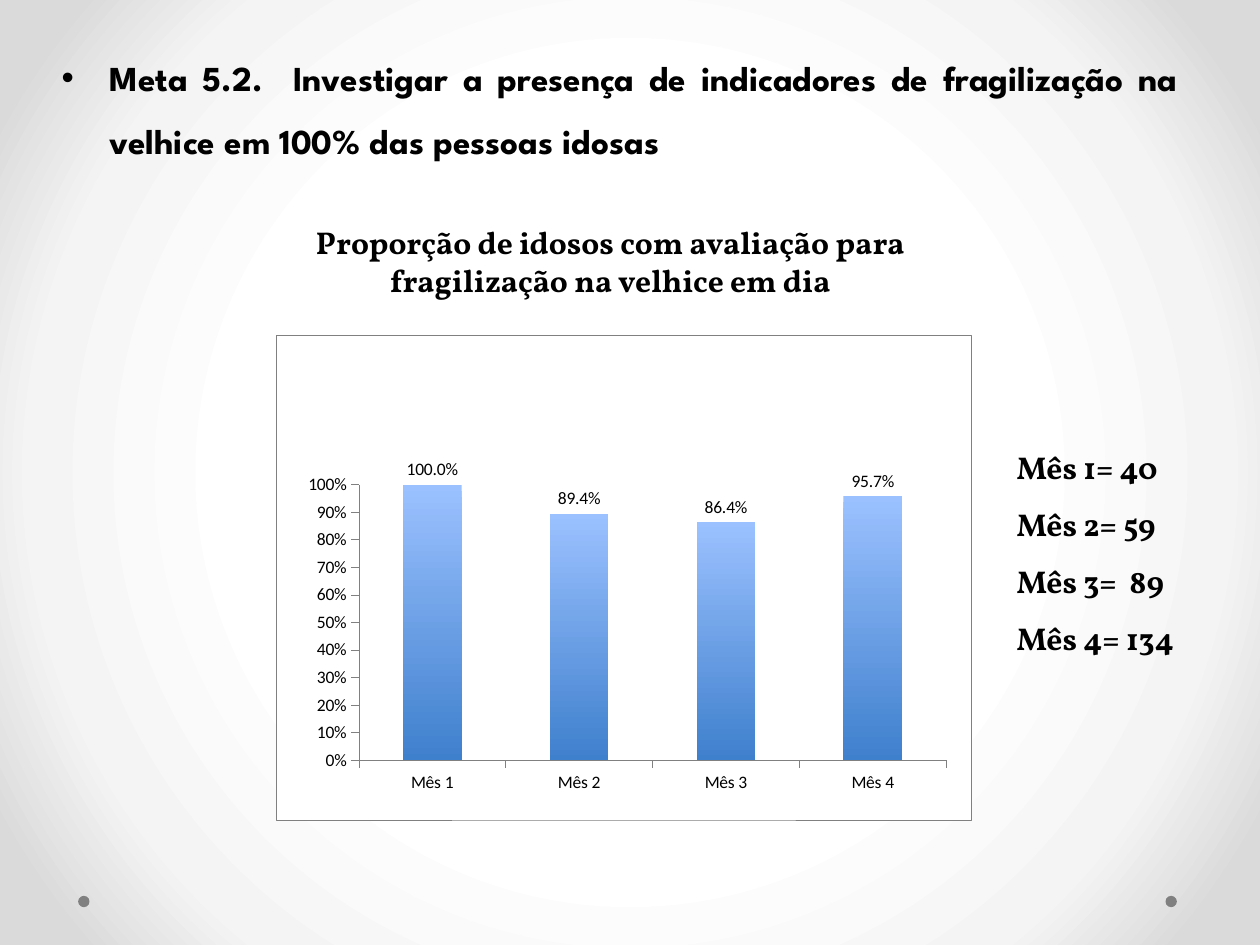
"""Build a slide on frailty screening of older people, with a monthly column chart."""
import pptx
import pptx.chart.data
import pptx.dml.color
import pptx.enum.chart
import pptx.enum.shapes
import pptx.enum.text
import pptx.oxml
import pptx.oxml.ns
import pptx.util
from pptx.util import Inches, Pt

COLORS = {"text": "000000", "line": "808080", "paper": "FFFFFF",
          "bar_top": "9BC1FF", "bar_bottom": "3F80CD"}
BACKDROP = [(50, "FFFFFF"), (76, "F4F4F4"), (92, "DADADA")]

GOAL = ["Meta 5.2.  Investigar a presença de indicadores de fragilização na "
        "velhice em 100% das pessoas idosas"]
CHART_HEADING = ["Proporção de idosos com avaliação para fragilização na velhice em dia"]
MONTHLY_COUNTS = ["Mês 1= 40", "Mês 2= 59", "Mês 3=  89", "Mês 4= 134"]
SHARES = {"Mês 1": 1, "Mês 2": 0.894, "Mês 3": 0.864, "Mês 4": 0.957}
PLOT_FRAME = {"x": 0.119, "y": 0.308, "w": 0.845, "h": 0.569}
DOT_LEFTS, DOT_TOP, DOT_SIZE = [0.62, 9.25], 7.11, 0.09

ALIGN = pptx.enum.text.PP_ALIGN


def rgb(name):
    return pptx.dml.color.RGBColor.from_string(COLORS[name])


def xml(markup):
    prefix, rest = markup.split(" ", 1) if " " in markup.split(">")[0] else markup.split(">", 1)
    joint = " " if " " in markup.split(">")[0] else ">"
    return pptx.oxml.parse_xml(f"{prefix} {pptx.oxml.ns.nsdecls('a', 'c')}{joint}{rest}")


def add_text(slide, lines, box, font, size, align=ALIGN.LEFT, spacing=None,
             before=None, bullet=None, indent=0):
    frame = slide.shapes.add_textbox(*map(Inches, box)).text_frame
    frame.word_wrap = True
    for index, line in enumerate(lines):
        paragraph = frame.paragraphs[0] if index == 0 else frame.add_paragraph()
        paragraph.alignment = align
        paragraph.line_spacing = spacing
        paragraph.space_before = before
        run = paragraph.add_run()
        run.text = line
        run.font.name, run.font.size, run.font.bold = font, Pt(size), True
        run.font.color.rgb = rgb("text")
        if bullet:
            properties = paragraph._p.get_or_add_pPr()
            properties.set("marL", str(Inches(indent)))
            properties.set("indent", str(-Inches(indent)))
            properties.append(xml('<a:buFont typeface="Arial"/>'))
            properties.append(xml(f'<a:buChar char="{bullet}"/>'))


def paint_background(slide):
    slide.background.fill.gradient()
    old = slide.element.xpath(".//p:bgPr/a:gradFill")[0]
    stops = "".join(f'<a:gs pos="{pos * 1000}"><a:srgbClr val="{color}"/></a:gs>'
                    for pos, color in BACKDROP)
    old.getparent().replace(old, xml(
        f'<a:gradFill rotWithShape="1"><a:gsLst>{stops}</a:gsLst><a:path path="circle">'
        '<a:fillToRect l="50000" t="50000" r="50000" b="50000"/></a:path></a:gradFill>'))


def add_dots(slide):
    for left in DOT_LEFTS:
        dot = slide.shapes.add_shape(pptx.enum.shapes.MSO_SHAPE.OVAL,
                                     *map(Inches, (left, DOT_TOP, DOT_SIZE, DOT_SIZE)))
        dot.shadow.inherit = False
        dot.fill.solid()
        dot.fill.fore_color.rgb = rgb("line")
        dot.line.fill.background()


def frame_chart(chart):
    paper = f'<a:solidFill><a:srgbClr val="{COLORS["paper"]}"/></a:solidFill>'
    border = (f'<a:ln w="{Pt(0.25)}"><a:solidFill><a:srgbClr val="{COLORS["line"]}"/>'
              '</a:solidFill></a:ln>')
    space = chart.element
    space.xpath("c:chart")[0].addnext(xml(f"<c:spPr>{paper}{border}</c:spPr>"))
    plot_area = space.xpath("c:chart/c:plotArea")[0]
    for layout in plot_area.xpath("c:layout"):
        plot_area.remove(layout)
    modes = '<c:xMode val="edge"/><c:yMode val="edge"/>'
    sizes = "".join(f'<c:{key} val="{value}"/>' for key, value in PLOT_FRAME.items())
    plot_area.insert(0, xml('<c:layout><c:manualLayout><c:layoutTarget val="inner"/>'
                            f'{modes}{sizes}</c:manualLayout></c:layout>'))
    plot_area.append(xml(f"<c:spPr>{paper}<a:ln><a:noFill/></a:ln></c:spPr>"))


def style_font(font):
    font.name, font.size, font.bold = "Calibri", Pt(10), False
    font.color.rgb = rgb("text")


def add_share_chart(slide):
    data = pptx.chart.data.CategoryChartData(number_format="0.0%")
    data.categories = list(SHARES)
    data.add_series("Series 1", list(SHARES.values()))
    chart = slide.shapes.add_chart(pptx.enum.chart.XL_CHART_TYPE.COLUMN_CLUSTERED,
                                   *map(Inches, (2.19, 2.66, 5.52, 3.85)), data).chart
    chart.has_title = chart.has_legend = False
    style_font(chart.font)
    for axis in (chart.category_axis, chart.value_axis):
        axis.has_major_gridlines = False
        axis.major_tick_mark = pptx.enum.chart.XL_TICK_MARK.OUTSIDE
        axis.minor_tick_mark = pptx.enum.chart.XL_TICK_MARK.NONE
        axis.format.line.color.rgb = rgb("line")
        axis.format.line.width = Pt(0.25)
        style_font(axis.tick_labels.font)
    scale = chart.value_axis
    scale.minimum_scale, scale.maximum_scale, scale.major_unit = 0, 1, 0.1
    scale.tick_labels.number_format = "0%"
    scale.tick_labels.number_format_is_linked = False

    plot = chart.plots[0]
    plot.gap_width = 150
    plot.vary_by_categories = False
    bars = plot.series[0]
    bars.invert_if_negative = False
    fill = bars.format.fill
    fill.gradient()
    fill.gradient_angle = 270
    for stop, color in zip(fill.gradient_stops, ("bar_top", "bar_bottom")):
        stop.color.rgb = rgb(color)
    labels = bars.data_labels
    labels.show_value = True
    labels.number_format, labels.number_format_is_linked = "0.0%", False
    labels.position = pptx.enum.chart.XL_LABEL_POSITION.OUTSIDE_END
    style_font(labels.font)
    frame_chart(chart)


def main():
    deck = pptx.Presentation()
    deck.slide_width, deck.slide_height = Inches(10), Inches(7.5)
    slide = deck.slides.add_slide(deck.slide_layouts[6])
    paint_background(slide)
    add_dots(slide)
    add_text(slide, GOAL, (0.39, 0.23, 9.06, 1.48), "League Spartan", 20,
             align=ALIGN.JUSTIFY, spacing=1.5, before=Pt(4), bullet="•", indent=0.38)
    add_share_chart(slide)
    add_text(slide, CHART_HEADING, (2.03, 1.72, 5.63, 1.01), "Vollkorn", 18,
             align=ALIGN.CENTER)
    add_text(slide, MONTHLY_COUNTS, (7.97, 3.36, 1.8, 1.92), "Vollkorn", 18, spacing=1.5)
    deck.save("out.pptx")


if __name__ == "__main__":
    main()
